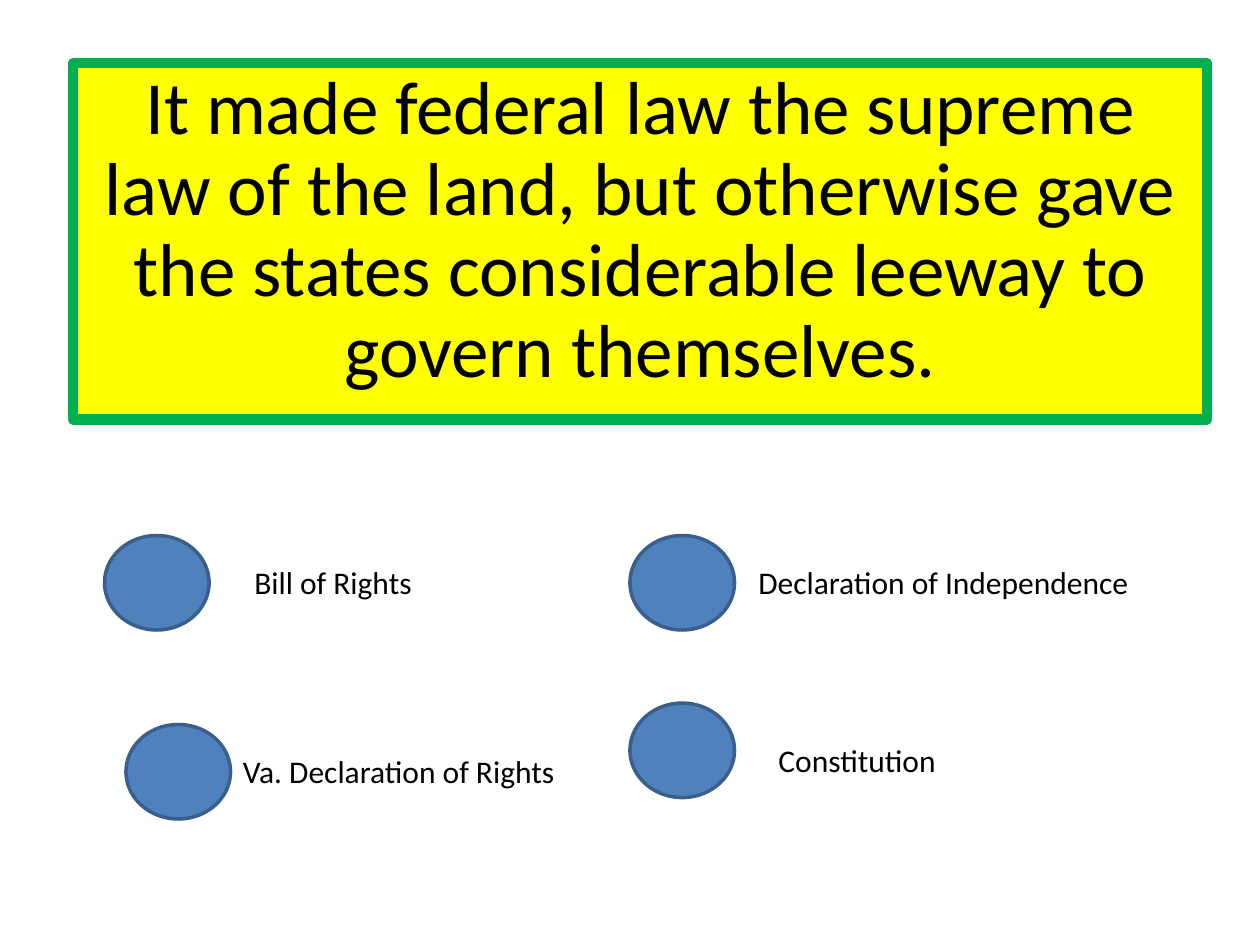
from dataclasses import dataclass

from pptx import Presentation
from pptx.dml.color import RGBColor
from pptx.enum.shapes import MSO_SHAPE
from pptx.enum.text import MSO_ANCHOR, MSO_AUTO_SIZE, PP_ALIGN
from pptx.slide import Slide
from pptx.util import Inches, Pt

OVAL = MSO_SHAPE.OVAL
TOP = MSO_ANCHOR.TOP
NO_AUTOFIT = MSO_AUTO_SIZE.NONE
GROW_TO_TEXT = MSO_AUTO_SIZE.SHAPE_TO_FIT_TEXT
CENTER = PP_ALIGN.CENTER

YELLOW = RGBColor(0xFF, 0xFF, 0x00)
GREEN = RGBColor(0x00, 0xB0, 0x50)
BLUE = RGBColor(0x4F, 0x81, 0xBD)
DARK_BLUE = RGBColor(0x3A, 0x5F, 0x8C)
BLACK = RGBColor(0x00, 0x00, 0x00)

FONT = "Calibri"
TITLE_ONLY = 5
QUESTION = (
    "It made federal law the supreme law of the land, but otherwise gave "
    "the states considerable leeway to govern themselves."
)


@dataclass(frozen=True)
class Answer:
    text: str
    button_left: float
    button_top: float
    label_left: float
    label_top: float
    label_width: float


ANSWERS = (
    Answer("Bill of Rights", 0.83, 4.25, 1.92, 4.42, 2.33),
    Answer("Declaration of Independence", 5, 4.25, 5.92, 4.42, 3.33),
    Answer("Va. Declaration of Rights", 1, 5.75, 1.83, 5.92, 2.92),
    Answer("Constitution", 5, 5.58, 6.08, 5.83, 2.83),
)


def format_paragraph(paragraph, size: float) -> None:
    for run in paragraph.runs:
        run.font.name = FONT
        run.font.size = Pt(size)
        run.font.color.rgb = BLACK


def paint(shape, fill: RGBColor, line: RGBColor, line_width: float) -> None:
    shape.fill.solid()
    shape.fill.fore_color.rgb = fill
    shape.line.color.rgb = line
    shape.line.width = Pt(line_width)


def add_question(slide: Slide, text: str) -> None:
    title = slide.shapes.title
    title.left, title.top = Inches(0.58), Inches(0.5)
    title.width, title.height = Inches(9), Inches(2.83)
    paint(title, YELLOW, GREEN, 6)
    text_frame = title.text_frame
    text_frame.text = text
    text_frame.word_wrap = True
    text_frame.auto_size = NO_AUTOFIT
    text_frame.vertical_anchor = TOP
    paragraph = text_frame.paragraphs[0]
    paragraph.alignment = CENTER
    paragraph.line_spacing = 0.9
    format_paragraph(paragraph, 42.9)


def add_button(slide: Slide, answer: Answer) -> None:
    button = slide.shapes.add_shape(
        OVAL,
        Inches(answer.button_left),
        Inches(answer.button_top),
        Inches(0.83),
        Inches(0.75),
    )
    button.shadow.inherit = False
    paint(button, BLUE, DARK_BLUE, 2)


def add_label(slide: Slide, answer: Answer) -> None:
    label = slide.shapes.add_textbox(
        Inches(answer.label_left),
        Inches(answer.label_top),
        Inches(answer.label_width),
        Inches(0.4),
    )
    text_frame = label.text_frame
    text_frame.text = answer.text
    text_frame.word_wrap = True
    text_frame.auto_size = GROW_TO_TEXT
    format_paragraph(text_frame.paragraphs[0], 18)


def main() -> None:
    presentation = Presentation()
    presentation.slide_width = Inches(10)
    presentation.slide_height = Inches(7.5)
    slide = presentation.slides.add_slide(presentation.slide_layouts[TITLE_ONLY])
    add_question(slide, QUESTION)
    for answer in ANSWERS:
        add_button(slide, answer)
    for answer in ANSWERS:
        add_label(slide, answer)
    presentation.save("out.pptx")


if __name__ == "__main__":
    main()
